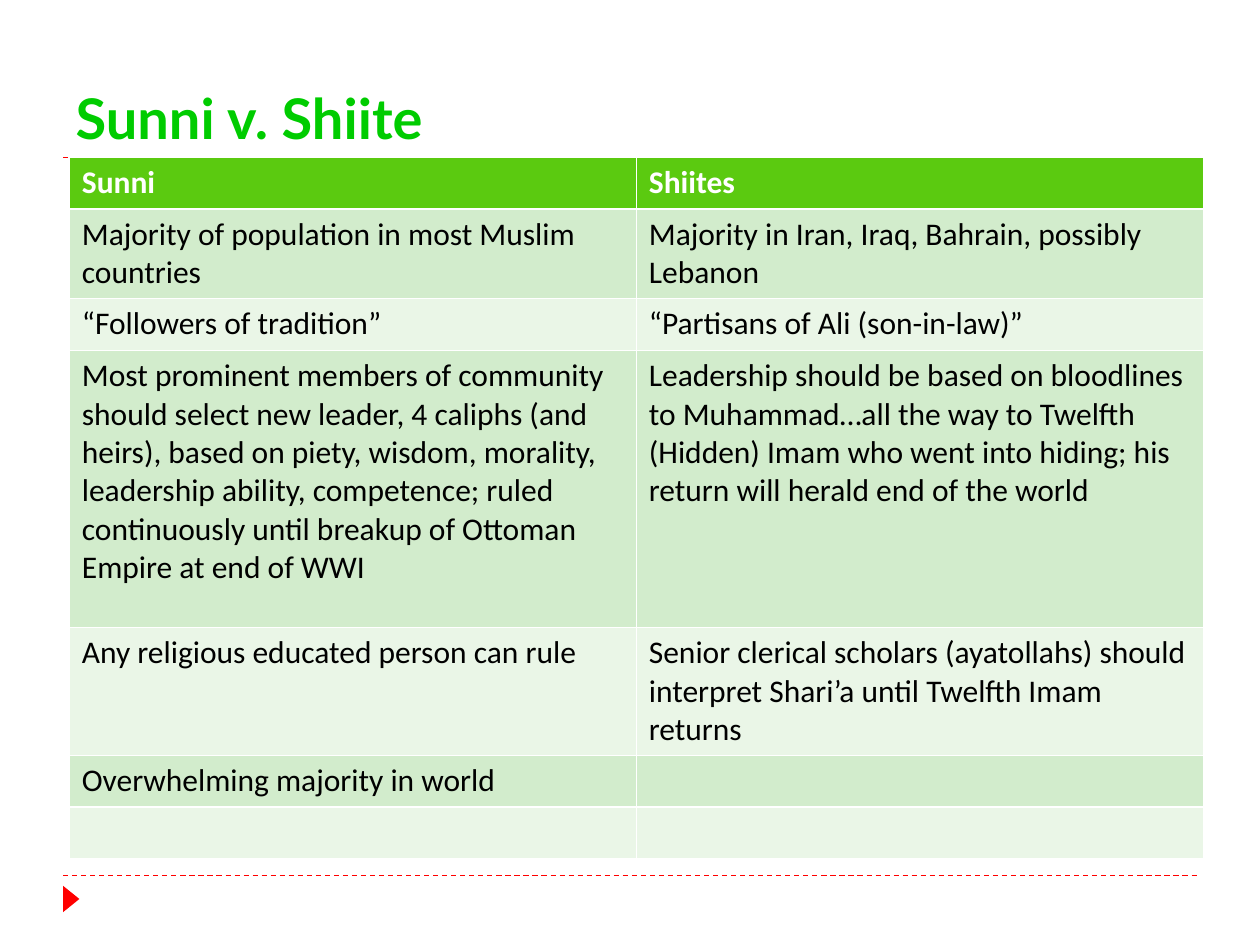
import pptx
import pptx.util
import pptx.dml.color
import pptx.enum.dml
import pptx.enum.shapes
import pptx.enum.text
import pptx.oxml.ns
import lxml.etree

Inches = pptx.util.Inches
Pt = pptx.util.Pt
RGBColor = pptx.dml.color.RGBColor

GREEN = RGBColor(0x00, 0xCC, 0x00)
HEAD = RGBColor(0x5B, 0xCA, 0x10)
DARK = RGBColor(0xD2, 0xEC, 0xCC)
LIGHT = RGBColor(0xEA, 0xF6, 0xE7)
RED = RGBColor(0xFF, 0x00, 0x00)
WHITE = RGBColor(0xFF, 0xFF, 0xFF)
BLACK = RGBColor(0x00, 0x00, 0x00)

ROWS = [
    (0.41, "Sunni", "Shiites"),
    (0.7, "Majority of population in most Muslim countries",
     "Majority in Iran, Iraq, Bahrain, possibly Lebanon"),
    (0.41, "“Followers of tradition”", "“Partisans of Ali (son-in-law)”"),
    (2.2, "Most prominent members of community should select new leader, "
     "4 caliphs (and heirs), based on piety, wisdom, morality, leadership "
     "ability, competence; ruled continuously until breakup of Ottoman "
     "Empire at end of WWI",
     "Leadership should be based on bloodlines to Muhammad…all the way to "
     "Twelfth (Hidden) Imam who went into hiding; his return will herald "
     "end of the world"),
    (1, "Any religious educated person can rule",
     "Senior clerical scholars (ayatollahs) should interpret Shari’a until "
     "Twelfth Imam returns"),
    (0.41, "Overwhelming majority in world", ""),
    (0.41, "", ""),
]


def style(para, face, size, color, bold):
    """Format every run of a paragraph."""
    for run in para.runs:
        run.font.name = face
        run.font.size = Pt(size)
        run.font.bold = bold
        run.font.color.rgb = color


def add_rule(slide, left, top, width):
    """Draw a dashed red rule across the slide."""
    rule = slide.shapes.add_connector(
        pptx.enum.shapes.MSO_CONNECTOR.STRAIGHT,
        Inches(left), Inches(top), Inches(left + width), Inches(top))
    rule.line.color.rgb = RED
    rule.line.width = Pt(0.75)
    rule.line.dash_style = pptx.enum.dml.MSO_LINE.DASH
    lxml.etree.SubElement(rule._element.spPr, pptx.oxml.ns.qn("a:effectLst"))


def add_mark(slide, left, top, width, height):
    """Place the red corner triangle, pointing right."""
    mark = slide.shapes.add_shape(
        pptx.enum.shapes.MSO_SHAPE.ISOSCELES_TRIANGLE,
        Inches(left), Inches(top), Inches(width), Inches(height))
    mark.rotation = 90
    mark.shadow.inherit = False
    mark.fill.solid()
    mark.fill.fore_color.rgb = RED
    mark.line.fill.background()


def set_title(slide, left, top, width, height):
    """Fill and place the title placeholder."""
    title = slide.shapes.title
    title.left, title.top = Inches(left), Inches(top)
    title.width, title.height = Inches(width), Inches(height)
    frame = title.text_frame
    frame.text = "Sunni v. Shiite"
    frame.vertical_anchor = pptx.enum.text.MSO_ANCHOR.BOTTOM
    para = frame.paragraphs[0]
    para.alignment = pptx.enum.text.PP_ALIGN.LEFT
    style(para, "Lato", 32, GREEN, True)


def add_grid(slide, left, top, width):
    """Build the two-column comparison table."""
    height = sum(row[0] for row in ROWS)
    grid = slide.shapes.add_table(
        len(ROWS), 2, Inches(left), Inches(top),
        Inches(width), Inches(height)).table
    for r, (tall, *texts) in enumerate(ROWS):
        grid.rows[r].height = Inches(tall)
        fill = HEAD if r == 0 else DARK if r % 2 else LIGHT
        for c, text in enumerate(texts):
            cell = grid.cell(r, c)
            cell.fill.solid()
            cell.fill.fore_color.rgb = fill
            if text:
                cell.text_frame.text = text
                style(cell.text_frame.paragraphs[0], "Calibri", 18,
                      BLACK if r else WHITE, r == 0)


def main():
    """Build the slide and save it."""
    deck = pptx.Presentation()
    deck.slide_width, deck.slide_height = Inches(10), Inches(7.5)
    slide = deck.slides.add_slide(deck.slide_layouts[5])
    for top in (6.95, 1.25):
        add_rule(slide, 0.5, top, 9)
    add_mark(slide, 0.46, 7.07, 0.21, 0.13)
    add_grid(slide, 0.55, 1.25, 9)
    set_title(slide, 0.5, 0.17, 9, 1.08)
    deck.save("out.pptx")


if __name__ == "__main__":
    main()
